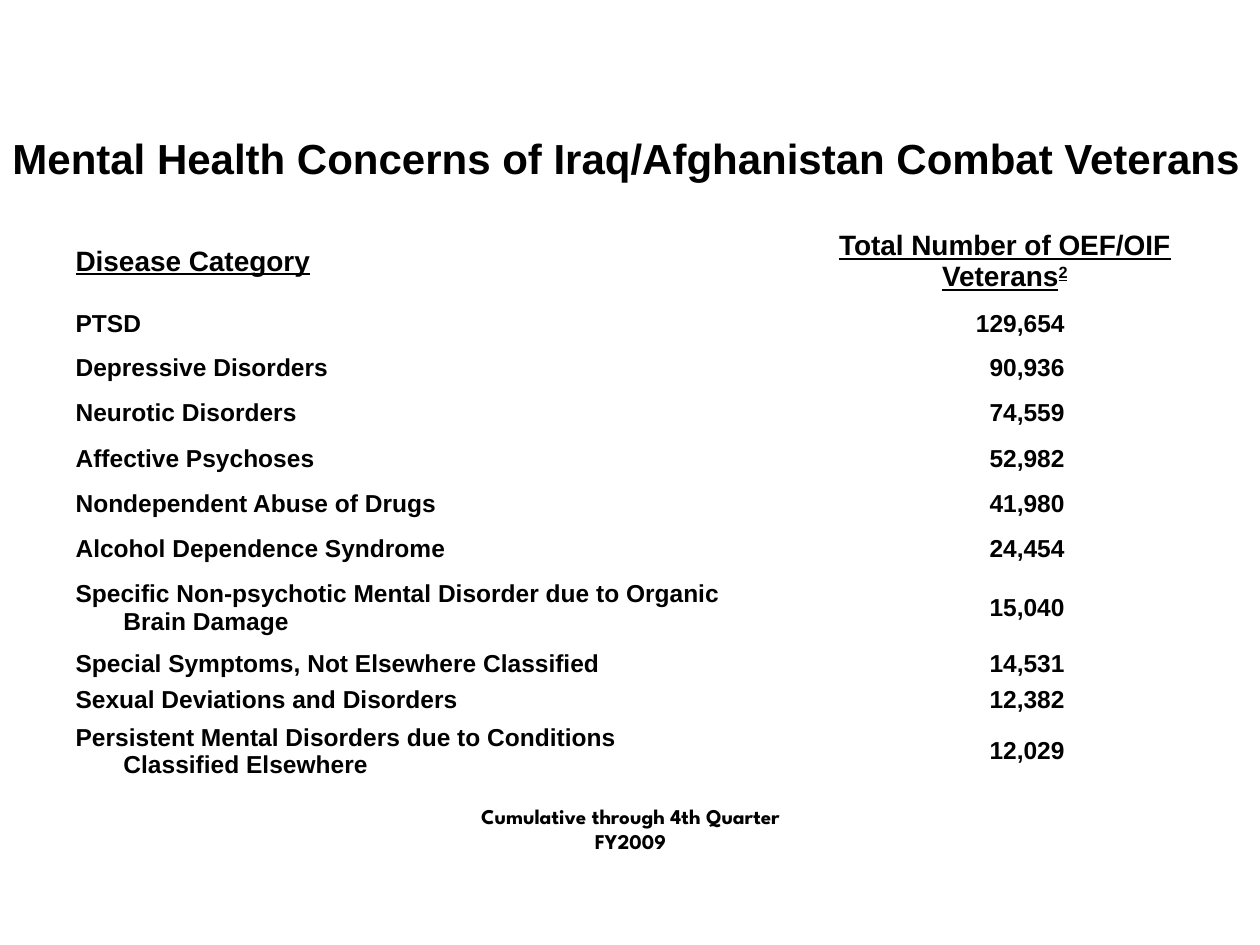
from dataclasses import dataclass

from pptx import Presentation
from pptx.dml.color import RGBColor
from pptx.enum.text import MSO_ANCHOR, PP_ALIGN
from pptx.util import Inches, Pt

LEFT, CENTER, RIGHT = PP_ALIGN.LEFT, PP_ALIGN.CENTER, PP_ALIGN.RIGHT
MIDDLE = MSO_ANCHOR.MIDDLE


@dataclass(frozen=True)
class Theme:
    ink: RGBColor = RGBColor(0, 0, 0)
    body_font: str = "Arial"
    note_font: str = "League Spartan"
    title_size: int = 24
    header_size: int = 16
    body_size: int = 14
    note_size: int = 12


class SlideBuilder:
    def __init__(self, slide, theme):
        self.slide = slide
        self.theme = theme

    def style(self, para, size, font=None, align=LEFT, underline=False):
        para.alignment = align
        para.font.name = font or self.theme.body_font
        para.font.size = Pt(size)
        para.font.bold = True
        para.font.underline = underline
        para.font.color.rgb = self.theme.ink

    def text(self, wording, left, top, width, height, size, font=None, align=LEFT):
        box = self.slide.shapes.add_textbox(
            Inches(left), Inches(top), Inches(width), Inches(height))
        box.text_frame.word_wrap = True
        para = box.text_frame.paragraphs[0]
        para.text = wording
        self.style(para, size, font, align)

    def table(self, left, top, column_widths, row_heights):
        frame = self.slide.shapes.add_table(
            len(row_heights), len(column_widths), Inches(left), Inches(top),
            Inches(sum(column_widths)), Inches(sum(row_heights)))
        table = frame.table
        table.first_row = table.horz_banding = False
        for column, width in zip(table.columns, column_widths):
            column.width = Inches(width)
        for row, height in zip(table.rows, row_heights):
            row.height = Inches(height)
        return table

    def cell(self, cell, wording, size, align=LEFT, right_margin=0, underline=False):
        cell.fill.background()
        cell.vertical_anchor = MIDDLE
        cell.margin_left = Inches(0.1)
        cell.margin_right = Inches(right_margin)
        cell.margin_top = cell.margin_bottom = 0
        para = cell.text_frame.paragraphs[0]
        para.text = wording
        self.style(para, size, align=align, underline=underline)
        return para

    def superscript(self, para, wording):
        span = para.add_run()
        span.text = wording
        span._r.get_or_add_rPr().set("baseline", "30000")

    def hanging_indent(self, para, depth):
        properties = para._p.get_or_add_pPr()
        properties.set("marL", str(Inches(depth)))
        properties.set("indent", str(-Inches(depth)))


# Disease category, number of veterans, row height
DISEASES = [
    ("PTSD", 129654, 0.34),
    ("Depressive Disorders", 90936, 0.36),
    ("Neurotic Disorders", 74559, 0.36),
    ("Affective Psychoses", 52982, 0.36),
    ("Nondependent Abuse of Drugs", 41980, 0.36),
    ("Alcohol Dependence Syndrome", 24454, 0.36),
    ("Specific Non-psychotic Mental Disorder due to Organic\vBrain Damage", 15040, 0.57),
    ("Special Symptoms, Not Elsewhere Classified", 14531, 0.32),
    ("Sexual Deviations and Disorders", 12382, 0.25),
    ("Persistent Mental Disorders due to Conditions\vClassified Elsewhere", 12029, 0.57),
]


def main():
    deck = Presentation()
    deck.slide_width, deck.slide_height = Inches(10), Inches(7.5)
    theme = Theme()
    page = SlideBuilder(deck.slides.add_slide(deck.slide_layouts[6]), theme)

    # Table header
    heights = [0.65] + [height for _, _, height in DISEASES]
    table = page.table(0.5, 1.75, [5.94, 2.97], heights)
    page.cell(table.cell(0, 0), "Disease Category", theme.header_size, underline=True)
    header = page.cell(table.cell(0, 1), "Total Number of OEF/OIF Veterans",
                       theme.header_size, CENTER, underline=True)
    page.superscript(header, "2")

    # Table body
    for row, (disease, count, _) in enumerate(DISEASES, start=1):
        label = page.cell(table.cell(row, 0), disease, theme.body_size)
        page.hanging_indent(label, 0.38)
        page.cell(table.cell(row, 1), f"{count:,}", theme.body_size, RIGHT, 0.96)

    # Period note and title
    page.text("Cumulative through 4th Quarter FY2009", 3.42, 6.33, 3.17, 0.58,
              theme.note_size, theme.note_font, CENTER)
    page.text("Mental Health Concerns of Iraq/Afghanistan Combat Veterans",
              0, 1, 10.25, 0.5, theme.title_size)

    deck.save("out.pptx")


if __name__ == "__main__":
    main()
